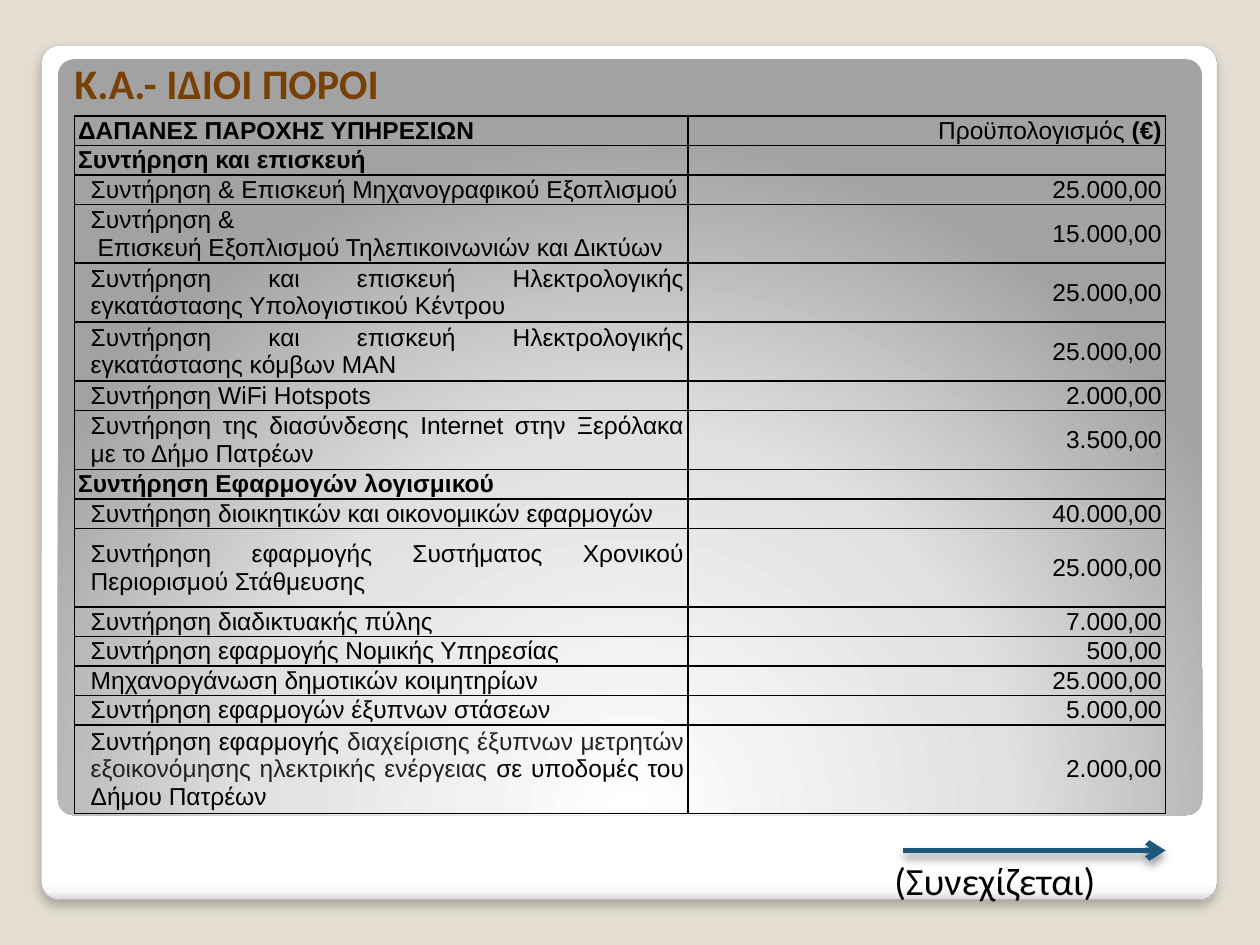
from dataclasses import dataclass

from lxml.etree import SubElement
from pptx import Presentation
from pptx.dml.color import RGBColor as RGB
from pptx.enum.shapes import MSO_CONNECTOR as LINK, MSO_SHAPE as FORM
from pptx.enum.text import MSO_ANCHOR as ANCHOR, MSO_AUTO_SIZE as AUTO, PP_ALIGN as ALIGN
from pptx.oxml.ns import qn
from pptx.util import Inches, Pt


@dataclass(frozen=True)
class Theme:
    back: str = "E3DED1"
    edge: str = "A4A4A4"
    head: str = "784004"
    ink: str = "000000"
    soft: str = "222222"
    arrow: str = "1B587C"
    card: tuple = ((0, "FFFFFF"), (98, "FFFFFF"), (99, "F7F7F7"), (100, "DADADA"))
    panel: tuple = ((0, "FFFFFF"), (55, "E1E1E1"), (100, "A2A2A2"))
    title: int = 24
    note: int = 22
    cell: int = 14
    sans: str = "Calibri"
    grid: str = "Arial"


THEME = Theme()
AMOUNT = "Προϋπολογισμός"

# Each row: lines of text, kind ("head", "group" or "item"), label, amount.
# A label or amount given as a tuple holds (text, bold, colour) runs.
ROWS = [
    (1, "head", "ΔΑΠΑΝΕΣ ΠΑΡΟΧΗΣ ΥΠΗΡΕΣΙΩΝ",
     ((AMOUNT, False, THEME.ink), (" (€)", True, THEME.ink))),
    (1, "group", "Συντήρηση και επισκευή", ""),
    (1, "item", "Συντήρηση & Επισκευή Μηχανογραφικού Εξοπλισμού", "25.000,00"),
    (2, "item", "Συντήρηση &\n Επισκευή Εξοπλισμού Τηλεπικοινωνιών και Δικτύων", "15.000,00"),
    (2, "item", "Συντήρηση και επισκευή Ηλεκτρολογικής εγκατάστασης Υπολογιστικού Κέντρου",
     "25.000,00"),
    (2, "item", "Συντήρηση και επισκευή Ηλεκτρολογικής εγκατάστασης κόμβων ΜΑΝ", "25.000,00"),
    (1, "item", "Συντήρηση WiFi Hotspots", "2.000,00"),
    (2, "item", "Συντήρηση της διασύνδεσης Internet στην Ξερόλακα με το Δήμο Πατρέων",
     "3.500,00"),
    (1, "group", "Συντήρηση Εφαρμογών λογισμικού", ""),
    (1, "item", "Συντήρηση διοικητικών και οικονομικών εφαρμογών", "40.000,00"),
    (2, "item", "Συντήρηση εφαρμογής Συστήματος Χρονικού Περιορισμού Στάθμευσης", "25.000,00"),
    (1, "item", "Συντήρηση διαδικτυακής πύλης", "7.000,00"),
    (1, "item", "Συντήρηση εφαρμογής Νομικής Υπηρεσίας", "500,00"),
    (1, "item", "Μηχανοργάνωση δημοτικών κοιμητηρίων", "25.000,00"),
    (1, "item", "Συντήρηση εφαρμογών έξυπνων στάσεων", "5.000,00"),
    (3, "item", (("Συντήρηση εφαρμογής ", False, THEME.ink),
                 ("διαχείρισης έξυπνων μετρητών εξοικονόμησης ηλεκτρικής ενέργειας ",
                  False, THEME.soft),
                 ("σε υποδομές του Δήμου Πατρέων", False, THEME.ink)), "2.000,00"),
]
TALL = 10    # the row with extra room
EXTRA = 0.16


def tag(node, name, **attrs):
    return SubElement(node, qn(f"a:{name}"), {key: str(val) for key, val in attrs.items()})


def shade(shape, blur, dist, alpha):
    """Give the shape a black shadow straight below it."""
    drop = tag(tag(shape._element.spPr, "effectLst"), "outerShdw",
               blurRad=Pt(blur), dist=Pt(dist), dir=5400000, algn="t", rotWithShape=0)
    tag(tag(drop, "srgbClr", val=THEME.ink), "alpha", val=alpha * 1000)


class Deck:
    def __init__(self, theme):
        self.theme = theme
        self.show = Presentation()
        self.show.slide_width, self.show.slide_height = Inches(10), Inches(7.5)
        self.slide = self.show.slides.add_slide(self.show.slide_layouts[5])
        fill = self.slide.background.fill
        fill.solid()
        fill.fore_color.rgb = RGB.from_string(theme.back)

    def font(self, run, size, name, color, bold=False):
        font = run.font
        font.size, font.name, font.bold = Pt(size), name, bold
        font.color.rgb = RGB.from_string(color)

    def card(self, box, stops, focus=None):
        """Draw a rounded card; focus makes its gradient a circle, else it runs down."""
        shape = self.slide.shapes.add_shape(FORM.ROUNDED_RECTANGLE, *map(Inches, box))
        shape.adjustments[0] = 0.021
        shape.line.fill.background()
        shape.fill.gradient()
        grad = shape._element.spPr.find(qn("a:gradFill"))
        for child in list(grad):
            grad.remove(child)
        items = tag(grad, "gsLst")
        for pos, color in stops:
            tag(tag(items, "gs", pos=pos * 1000), "srgbClr", val=color)
        if focus:
            sides = {key: val * 1000 for key, val in zip("ltrb", focus)}
            tag(tag(grad, "path", path="circle"), "fillToRect", **sides)
        else:
            tag(grad, "lin", ang=5400000, scaled=0)
        shape.shadow.inherit = False
        return shape

    def title(self, text, box):
        shape = self.slide.shapes.title
        self.slide.shapes._spTree.append(shape._element)
        shape.left, shape.top, shape.width, shape.height = map(Inches, box)
        frame = shape.text_frame
        frame.text = text
        frame.word_wrap, frame.auto_size = True, AUTO.SHAPE_TO_FIT_TEXT
        frame.vertical_anchor = ANCHOR.BOTTOM
        frame.margin_left = frame.margin_right = frame.margin_bottom = 0
        frame.margin_top = Inches(0.07)
        para = frame.paragraphs[0]
        para.alignment, para.line_spacing, para.space_after = ALIGN.LEFT, 1.1, Pt(6)
        props = para._p.get_or_add_pPr()
        props.set("marL", str(Inches(0.4)))
        props.set("indent", str(Inches(-0.4)))
        self.font(para.runs[0], self.theme.title, self.theme.sans, self.theme.head, True)

    def note(self, text, box):
        frame = self.slide.shapes.add_textbox(*map(Inches, box)).text_frame
        frame.text = text
        frame.word_wrap, frame.auto_size = True, AUTO.SHAPE_TO_FIT_TEXT
        self.font(frame.paragraphs[0].runs[0], self.theme.note, self.theme.sans, self.theme.ink)

    def arrow(self, left, right, top):
        line = self.slide.shapes.add_connector(
            LINK.STRAIGHT, *map(Inches, (left, top, right, top)))
        line.line.width = Pt(3.35)
        line.line.color.rgb = RGB.from_string(self.theme.arrow)
        tag(line.line._get_or_add_ln(), "tailEnd", type="arrow")
        shade(line, 5.2, 3, 40)

    def cell(self, cell, text, align, bold=False, indent=0):
        look = self.theme
        props = cell._tc.get_or_add_tcPr()
        for side in "LRTB":
            edge = tag(props, f"ln{side}", w=Pt(1))
            tag(tag(edge, "solidFill"), "srgbClr", val=look.ink)
        cell.fill.background()
        cell.vertical_anchor = ANCHOR.MIDDLE
        cell.margin_left = cell.margin_right = Inches(0.03)
        cell.margin_top = cell.margin_bottom = 0
        if isinstance(text, tuple):
            for part, heavy, color in text:
                run = cell.text_frame.paragraphs[0].add_run()
                run.text = part
                self.font(run, look.cell, look.grid, color, heavy)
        else:
            cell.text_frame.text = text
            for para in cell.text_frame.paragraphs:
                for run in para.runs:
                    self.font(run, look.cell, look.grid, look.ink, bold)
        for para in cell.text_frame.paragraphs:
            para.alignment = align
            para._p.get_or_add_pPr().set("marL", str(Inches(indent)))
            if not para.runs:
                tag(para._p, "endParaRPr", sz=look.cell * 100)

    def table(self, rows, box, cols):
        grid = self.slide.shapes.add_table(len(rows), len(cols), *map(Inches, box)).table
        grid.first_row = grid.horz_banding = False
        for col, width in zip(grid.columns, cols):
            col.width = Inches(width)
        unit = (box[3] - EXTRA) / sum(row[0] for row in rows)
        for num, (lines, kind, label, amount) in enumerate(rows):
            grid.rows[num].height = Inches(lines * unit + (EXTRA if num == TALL else 0))
            item = kind == "item"
            self.cell(grid.cell(num, 0), label, ALIGN.JUSTIFY, not item, 0.1 if item else 0)
            self.cell(grid.cell(num, 1), amount, ALIGN.RIGHT)


def main():
    deck = Deck(THEME)
    card = deck.card((0.33, 0.36, 9.33, 6.78), THEME.card)
    card.line.width = Pt(0.16)
    card.line.color.rgb = RGB.from_string(THEME.edge)
    card._element.spPr.remove(card._element.spPr.find(qn("a:effectLst")))
    shade(card, 6, 4, 25)
    deck.card((0.46, 0.47, 9.08, 6), THEME.panel, (50, 175, 50, -75))
    deck.title("Κ.Α.- ΙΔΙΟΙ ΠΟΡΟΙ", (0.59, 0.36, 9, 0.5))
    deck.note("(Συνεχίζεται)", (7, 6.75, 2.33, 0.47))
    deck.arrow(7.17, 9.25, 6.75)
    deck.table(ROWS, (0.59, 0.92, 8.66, 5.53), (4.87, 3.79))
    deck.show.save("out.pptx")


if __name__ == "__main__":
    main()
